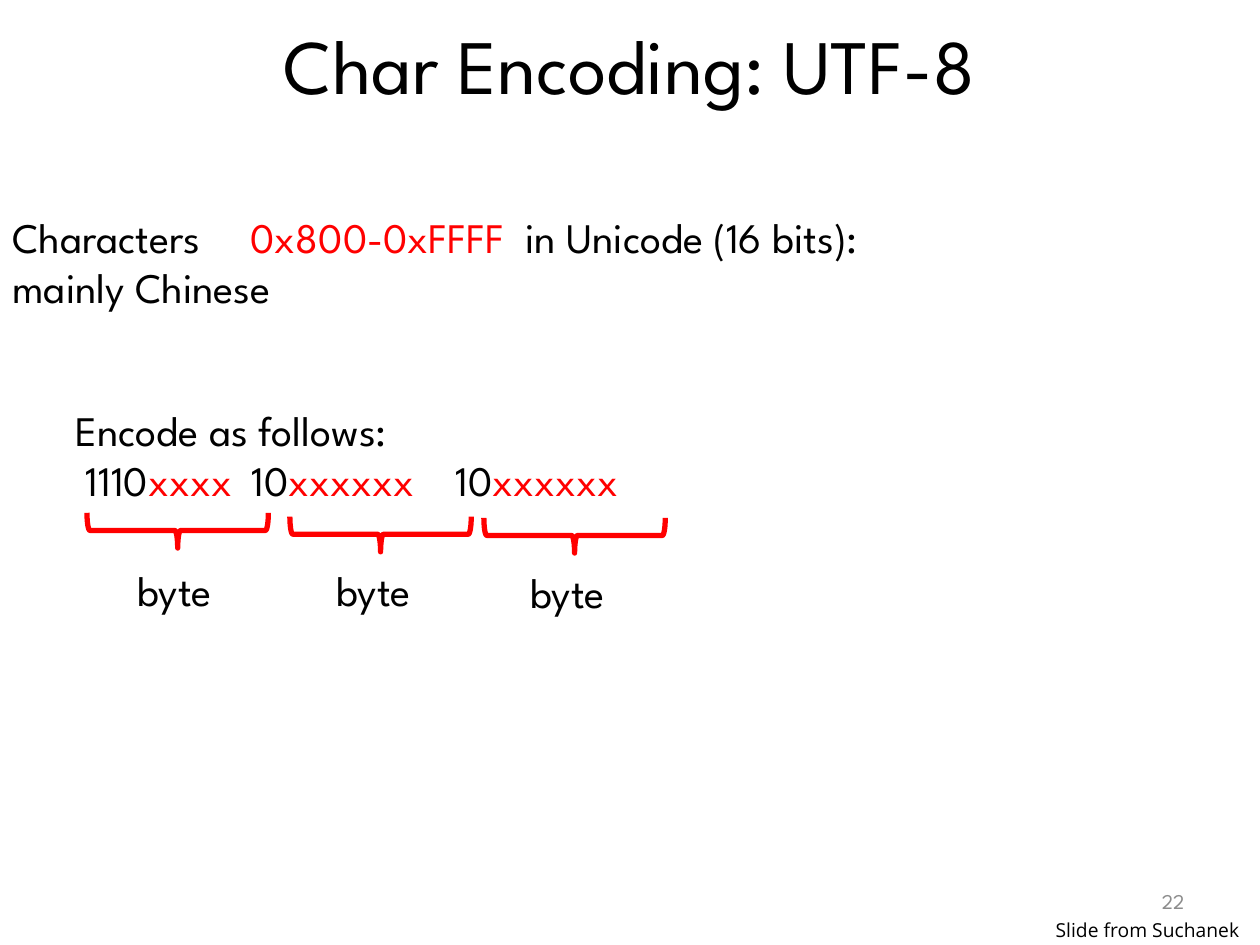
"""Build the slide that explains three-byte UTF-8 encoding."""
from typing import NamedTuple

from lxml import etree
from pptx import Presentation
from pptx import util as u
from pptx.dml.color import RGBColor
from pptx.enum import shapes, text
from pptx.oxml.ns import qn

BLACK = RGBColor(0x00, 0x00, 0x00)
RED = RGBColor(0xFF, 0x00, 0x00)
GRAY = RGBColor(0x8C, 0x8C, 0x8C)
HEADING_FONT = "League Spartan"
CREDIT_FONT = "Open Sans"


class Box(NamedTuple):
    left: float
    top: float
    width: float
    height: float

    def lengths(self) -> list[u.Length]:
        return [u.Inches(side) for side in self]


class Span(NamedTuple):
    wording: str
    color: RGBColor = BLACK


class ByteGroup(NamedTuple):
    brace: Box
    label: Box


BYTE_GROUPS = [
    ByteGroup(Box(1.27, 3.49, 0.28, 1.44), Box(0.99, 4.43, 1.27, 0.5)),
    ByteGroup(Box(2.88, 3.52, 0.28, 1.44), Box(2.57, 4.43, 1.27, 0.5)),
    ByteGroup(Box(4.42, 3.53, 0.28, 1.44), Box(4.11, 4.45, 1.27, 0.5)),
]


def add_text(slide, box: Box, lines: list[list[Span]], *, size: float = 24,
             font: str = HEADING_FONT, align=text.PP_ALIGN.LEFT,
             anchor=text.MSO_ANCHOR.TOP, wrap: bool = True,
             tabs: tuple[float, ...] = ()) -> None:
    """Add a text box with one paragraph per line of coloured spans."""
    frame = slide.shapes.add_textbox(*box.lengths()).text_frame
    frame.word_wrap = wrap
    frame.vertical_anchor = anchor
    for index, spans in enumerate(lines):
        paragraph = frame.add_paragraph() if index else frame.paragraphs[0]
        paragraph.alignment = align
        if tabs:
            properties = paragraph._p.get_or_add_pPr()
            stops = etree.SubElement(properties, qn("a:tabLst"))
            for stop in tabs:
                etree.SubElement(stops, qn("a:tab"), pos=str(u.Inches(stop)), algn="l")
        for span in spans:
            run = paragraph.add_run()
            run.text = span.wording
            run.font.size = u.Pt(size)
            run.font.name = font
            run.font.color.rgb = span.color


def add_byte_group(slide, group: ByteGroup) -> None:
    """Add a downward brace and the label beneath it."""
    brace = slide.shapes.add_shape(shapes.MSO_SHAPE.RIGHT_BRACE, *group.brace.lengths())
    brace.rotation = 90
    brace.shadow.inherit = False
    brace.fill.background()
    brace.line.color.rgb = RED
    brace.line.width = u.Pt(3)
    add_text(slide, group.label, [[Span("byte")]])


def main() -> None:
    """Compose and save the slide."""
    deck = Presentation()
    deck.slide_width, deck.slide_height = u.Inches(10), u.Inches(7.5)
    slide = deck.slides.add_slide(deck.slide_layouts[6])

    add_text(slide, Box(0.5, 0, 9, 1.01), [[Span("Char Encoding: UTF-8")]], size=44,
             align=text.PP_ALIGN.CENTER, anchor=text.MSO_ANCHOR.MIDDLE)
    add_text(slide, Box(7.17, 6.95, 2.33, 0.4), [[Span("22", GRAY)]], size=12,
             align=text.PP_ALIGN.RIGHT, anchor=text.MSO_ANCHOR.MIDDLE)
    add_text(slide, Box(0, 1.63, 9.62, 0.91), [
        [Span("Characters\t"), Span("0x800-0xFFFF", RED), Span("\tin Unicode (16 bits):")],
        [Span("mainly Chinese")],
    ], tabs=(1.89, 4.07))
    add_text(slide, Box(0.5, 3.16, 6.01, 0.91), [
        [Span("Encode as follows:")],
        [Span(" 1110"), Span("xxxx\t", RED), Span("10"), Span("xxxxxx\t", RED),
         Span("10"), Span("xxxxxx", RED)],
    ], tabs=(1.4, 3.02))
    for group in BYTE_GROUPS:
        add_byte_group(slide, group)
    add_text(slide, Box(8.28, 7.24, 1.72, 0.29), [[Span("Slide from Suchanek")]],
             size=11, font=CREDIT_FONT, wrap=False)

    deck.save("out.pptx")


if __name__ == "__main__":
    main()
